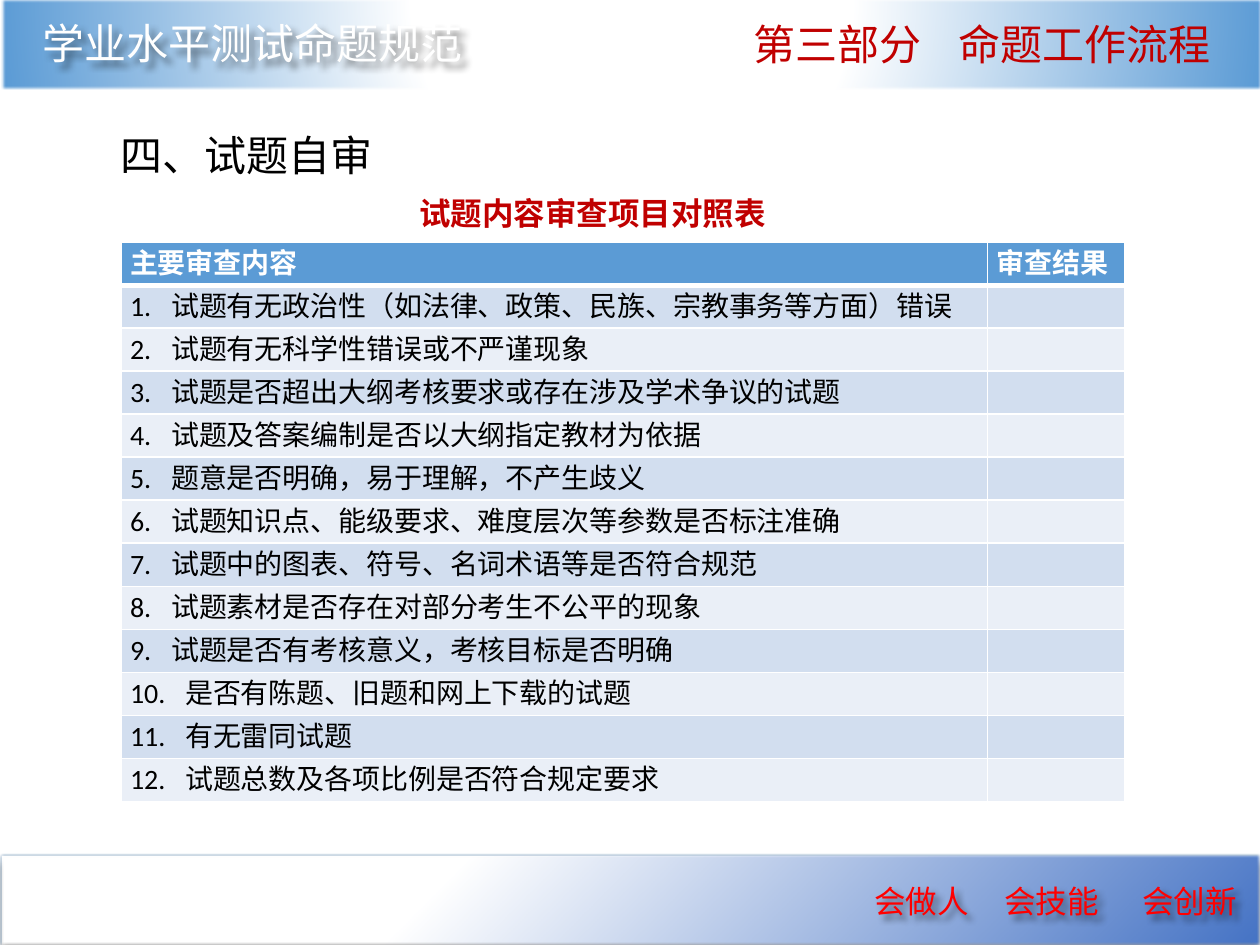
from pptx import Presentation
from pptx.dml.color import RGBColor as RGB
from pptx.enum.shapes import MSO_SHAPE as Preset
from pptx.enum.text import MSO_ANCHOR as Anchor
from pptx.oxml import parse_xml
from pptx.oxml.ns import nsdecls, qn
from pptx.util import Pt

COLORS = {
    "white": "FFFFFF", "black": "000000", "red": "FF0000", "crimson": "C00000",
    "sky": "5B9BD5", "royal": "4472C4", "outline": "43739E",
    "odd": "D2DEEF", "even": "EAEFF7",
}
SANS_JP, SANS_SC, BODY = "Noto Sans CJK JP", "Noto Sans CJK SC", "Calibri"
CHECKS = [
    "试题有无政治性（如法律、政策、民族、宗教事务等方面）错误",
    "试题有无科学性错误或不严谨现象",
    "试题是否超出大纲考核要求或存在涉及学术争议的试题",
    "试题及答案编制是否以大纲指定教材为依据",
    "题意是否明确，易于理解，不产生歧义",
    "试题知识点、能级要求、难度层次等参数是否标注准确",
    "试题中的图表、符号、名词术语等是否符合规范",
    "试题素材是否存在对部分考生不公平的现象",
    "试题是否有考核意义，考核目标是否明确",
    "是否有陈题、旧题和网上下载的试题",
    "有无雷同试题",
    "试题总数及各项比例是否符合规定要求",
]


def element(tag, attributes="", content=""):
    return parse_xml(f'<a:{tag} {nsdecls("a")} {attributes}>{content}</a:{tag}>')


def solid(color):
    return f'<a:solidFill><a:srgbClr val="{COLORS[color]}"/></a:solidFill>'


def shadow(angle, opacity):
    return (f'<a:outerShdw blurRad="{Pt(4)}" dist="{Pt(4)}" dir="{angle * 60000}" algn="tl" rotWithShape="0">'
            f'<a:srgbClr val="{COLORS["black"]}"><a:alpha val="{opacity * 1000}"/></a:srgbClr></a:outerShdw>')


class SlideBuilder:
    def __init__(self, slide):
        self.slide = slide

    def band(self, left, top, width, height, color, focus, outline=None, effects=""):
        band = self.slide.shapes.add_shape(Preset.RECTANGLE, Pt(left), Pt(top), Pt(width), Pt(height))
        band.fill.background()
        stops = "".join(f'<a:gs pos="{position * 1000}"><a:srgbClr val="{COLORS[stop]}"/></a:gs>'
                        for position, stop in ((0, "white"), (35, "white"), (100, color)))
        edges = " ".join(f'{side}="{share * 1000}"' for side, share in zip("ltrb", focus))
        gradient = element("gradFill", 'rotWithShape="1"',
                           f'<a:gsLst>{stops}</a:gsLst><a:path path="circle"><a:fillToRect {edges}/></a:path>')
        properties = band.element.spPr
        properties.replace(properties.find(qn("a:noFill")), gradient)
        if outline:
            band.line.color.rgb = RGB.from_string(COLORS[outline])
            band.line.width = Pt(1)
        else:
            band.line.fill.background()
        properties.append(element("effectLst", "", f'{effects}<a:softEdge rad="{Pt(1)}"/>'))

    def fill_text(self, paragraph, text, font, size, color, bold=False, tabs=()):
        if tabs:
            stops = "".join(f'<a:tab pos="{Pt(stop)}" algn="l"/>' for stop in tabs)
            paragraph._p.get_or_add_pPr().append(element("tabLst", "", stops))
        paragraph.text = text
        for run in paragraph.runs:
            run.font.name = font
            run.font.size = Pt(size)
            run.font.bold = bold
            run.font.color.rgb = RGB.from_string(COLORS[color])
            run.font._element.append(element("ea", f'typeface="{font}"'))

    def label(self, left, top, width, height, text, font, size, color,
              bold=False, tabs=(), anchor=Anchor.MIDDLE, spacing=None, shaded=False):
        box = self.slide.shapes.add_textbox(Pt(left), Pt(top), Pt(width), Pt(height))
        frame = box.text_frame
        frame.word_wrap = True
        frame.vertical_anchor = anchor
        paragraph = frame.paragraphs[0]
        self.fill_text(paragraph, text, font, size, color, bold, tabs)
        if spacing:
            paragraph.line_spacing = spacing
        if shaded:
            box.element.spPr.append(element("effectLst", "", shadow(45, 45)))

    def borders(self, cell, top, bottom):
        properties = cell._tc.get_or_add_tcPr()
        for position, (side, width) in enumerate((("L", 1), ("R", 1), ("T", top), ("B", bottom))):
            properties.insert(position, element(f"ln{side}", f'w="{Pt(width)}"', solid("white")))

    def checklist(self, left, top, widths, row_height, headings, checks):
        frame = self.slide.shapes.add_table(len(checks) + 1, len(widths), Pt(left), Pt(top),
                                            Pt(sum(widths)), Pt(row_height * (len(checks) + 1)))
        table = frame.table
        for column, width in zip(table.columns, widths):
            column.width = Pt(width)
        rows = [headings] + [(f"{number}.\t{check}", "") for number, check in enumerate(checks, 1)]
        for number, (row, texts) in enumerate(zip(table.rows, rows)):
            row.height = Pt(row_height)
            fill = "sky" if number == 0 else "odd" if number % 2 else "even"
            for cell, text in zip(row.cells, texts):
                cell.fill.solid()
                cell.fill.fore_color.rgb = RGB.from_string(COLORS[fill])
                cell.margin_left = cell.margin_right = Pt(5.2)
                cell.margin_top = cell.margin_bottom = Pt(2.5 if text else 0)
                self.borders(cell, 3 if number == 1 else 1, 1 if number else 3)
                if text:
                    tabs = (23.5 if number < 10 else 31.5,) if number else ()
                    self.fill_text(cell.text_frame.paragraphs[0], text, BODY, 16,
                                   "black" if number else "white", number == 0, tabs)


def main():
    deck = Presentation()
    deck.slide_width, deck.slide_height = Pt(720), Pt(540)
    builder = SlideBuilder(deck.slides.add_slide(deck.slide_layouts[6]))

    builder.band(0, 488.2, 720, 51.8, "royal", (0, 0, 100, 100), "outline", shadow(90, 38))
    builder.label(492.5, 500.4, 248.4, 28.8, "会做人\t会技能\t会创新", SANS_JP, 18, "red",
                  tabs=(74.3, 153), shaded=True)
    builder.band(0.7, -0.7, 720, 51.8, "sky", (50, -80, 50, 180))
    builder.label(17.3, 6.5, 259.2, 36, "学业水平测试命题规范", SANS_SC, 24, "white", shaded=True)
    builder.label(61.9, 70.6, 360.7, 36, "四、试题自审", SANS_SC, 24, "black")
    builder.label(423.4, 7.2, 288.7, 36, "第三部分\t命题工作流程", SANS_SC, 24, "crimson", tabs=(117.5,))
    builder.label(232.6, 110, 229.7, 31, "试题内容审查项目对照表", BODY, 18, "crimson",
                  bold=True, anchor=Anchor.TOP, spacing=0.9)
    builder.checklist(69.1, 138.4, (495.2, 78.3), 24.6, ("主要审查内容", "审查结果"), CHECKS)
    deck.save("out.pptx")


if __name__ == "__main__":
    main()
